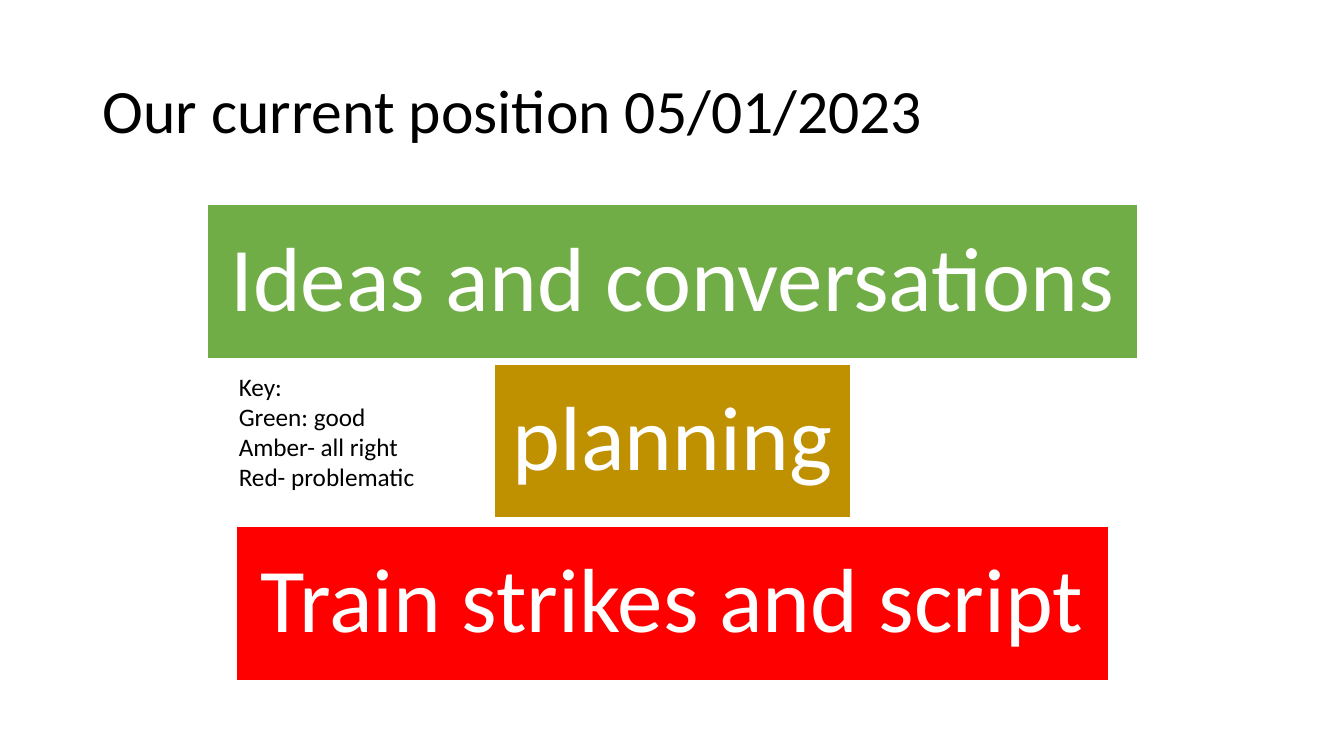
from pptx import Presentation
from pptx.dml.color import RGBColor
from pptx.enum import shapes, text
from pptx.util import Inches, Pt

FONT = "Calibri"
BLACK = "000000"
WHITE = "FFFFFF"
CENTRE = 6.67
BAR_HEIGHT = 1.53
BARS = [
    ("Ideas and conversations", 2.03, 9.22, "70AD47"),
    ("planning", 3.61, 3.54, "BF9000"),
    ("Train strikes and script", 5.22, 8.66, "FF0000"),
]
KEY = ["Key:", "Green: good", "Amber- all right", "Red- problematic"]


def colour(value):
    """Turn a hex string into a colour."""
    return RGBColor.from_string(value)


def place(shape, left, top, width, height):
    """Move and size a shape, in inches."""
    shape.left, shape.top = Inches(left), Inches(top)
    shape.width, shape.height = Inches(width), Inches(height)


def write(frame, lines, size, font_colour, align, spacing=1.0):
    """Fill a text frame with one paragraph for each line."""
    frame.word_wrap = True
    frame.text = "\n".join(lines)
    for paragraph in frame.paragraphs:
        paragraph.alignment = align
        paragraph.line_spacing = spacing
        paragraph.font.name = FONT
        paragraph.font.size = Pt(size)
        paragraph.font.color.rgb = colour(font_colour)


def add_title(slide, title):
    """Format the title placeholder."""
    shape = slide.shapes.title
    place(shape, 0.92, 0.4, 11.5, 1.45)
    frame = shape.text_frame
    write(frame, [title], 44, BLACK, text.PP_ALIGN.LEFT, 0.9)
    frame.auto_size = text.MSO_AUTO_SIZE.NONE
    frame.vertical_anchor = text.MSO_ANCHOR.MIDDLE


def add_bar(slide, label, top, width, fill):
    """Add a centred status bar with its label."""
    bar = slide.shapes.add_shape(
        shapes.MSO_SHAPE.RECTANGLE, Inches(CENTRE - width / 2), Inches(top),
        Inches(width), Inches(BAR_HEIGHT))
    bar.shadow.inherit = False
    bar.fill.solid()
    bar.fill.fore_color.rgb = colour(fill)
    bar.line.color.rgb = colour(WHITE)
    bar.line.width = Pt(1)
    frame = bar.text_frame
    frame.margin_left = frame.margin_right = Inches(0.18)
    frame.margin_top = frame.margin_bottom = Inches(0.18)
    frame.vertical_anchor = text.MSO_ANCHOR.MIDDLE
    write(frame, [label], 65, WHITE, text.PP_ALIGN.CENTER, 0.9)


def add_key(slide, lines):
    """Add the key to the status colours."""
    box = slide.shapes.add_textbox(
        Inches(2.27), Inches(3.63), Inches(2.43), Inches(1.31))
    write(box.text_frame, lines, 18, BLACK, text.PP_ALIGN.LEFT)
    box.text_frame.auto_size = text.MSO_AUTO_SIZE.SHAPE_TO_FIT_TEXT


def main():
    """Build and save the slide."""
    presentation = Presentation()
    presentation.slide_width = Inches(13.33)
    presentation.slide_height = Inches(7.5)
    slide = presentation.slides.add_slide(presentation.slide_layouts[5])
    add_title(slide, "Our current position 05/01/2023")
    for bar in BARS:
        add_bar(slide, *bar)
    add_key(slide, KEY)
    presentation.save("out.pptx")


if __name__ == "__main__":
    main()
